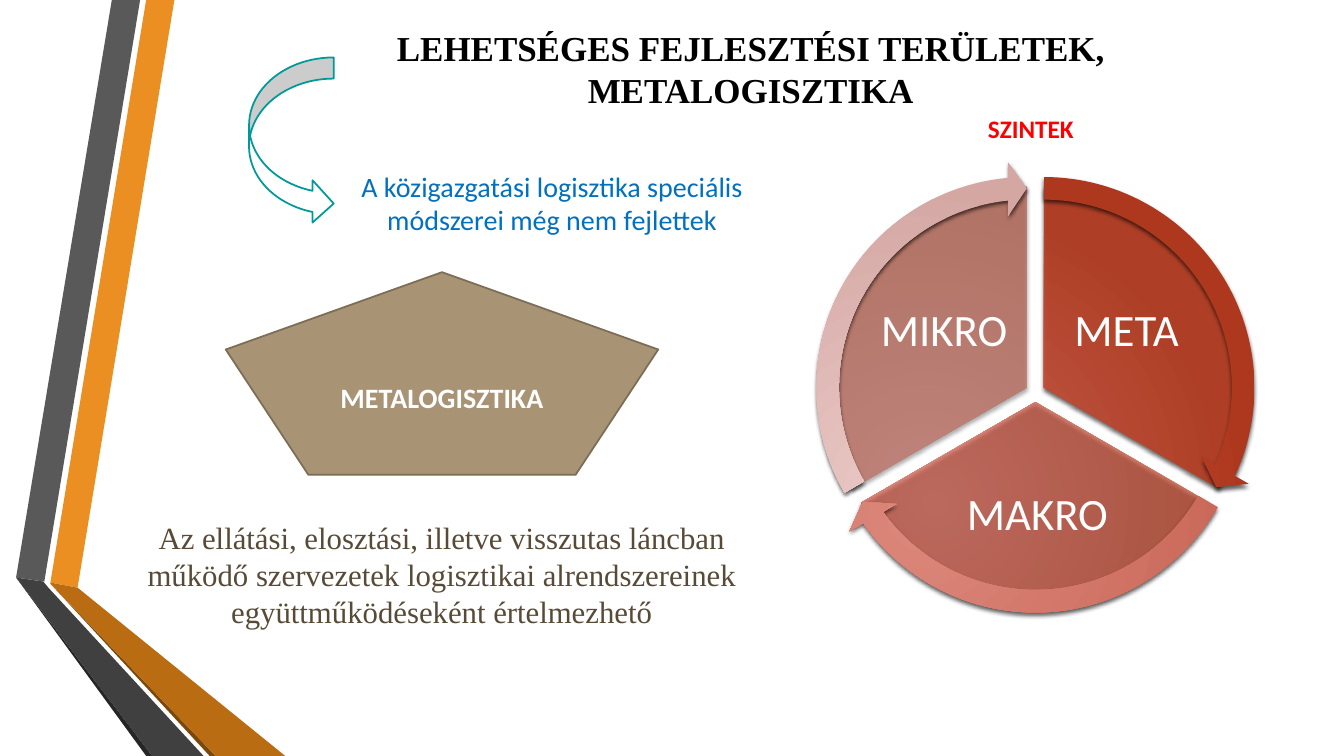
from collections import namedtuple

from lxml.etree import SubElement
from pptx import Presentation
from pptx.dml.color import RGBColor
from pptx.enum.shapes import MSO_SHAPE
from pptx.enum.text import MSO_ANCHOR, PP_ALIGN
from pptx.oxml import parse_xml
from pptx.oxml.ns import nsdecls, qn
from pptx.util import Inches, Pt

COLORS = {
    "black": "000000", "white": "FFFFFF", "red": "FF0000", "blue": "0070C0",
    "teal": "009999", "brown": "574A37", "tan": "A89374", "tan_line": "7C6D56",
    "orange": "EB8F22", "orange_fold": "B96C11", "orange_edge": "7B480B",
    "gray": "595959", "gray_fold": "404040", "gray_edge": "262626",
    "wedge_light": "D05A4A", "wedge_dark": "B63B1F",
    "meta_light": "C85849", "meta_dark": "AE381E",
    "makro_light": "DC887C", "makro_dark": "C96758",
    "mikro_light": "EBCAC7", "mikro_dark": "D4A7A3",
}
SANS, SERIF = "Calibri", "Times New Roman"

# Ribbon outlines on a grid of one-inch columns and rows
RIBBONS = [
    ("orange", [(0.5, 5.78), (0.77, 5.83), (1.73, 0), (1.45, 0)]),
    ("gray", [(1.39, 0), (1.11, 0), (0.16, 5.73), (0.44, 5.77)]),
    ("gray_edge", [(0.16, 5.73), (1.45, 7.5), (1.51, 7.5)]),
    ("orange_edge", [(0.5, 5.79), (2.08, 7.5), (2.14, 7.5)]),
    ("orange_fold", [(0.5, 5.79), (2.14, 7.5), (2.83, 7.5), (0.77, 5.83), (0.5, 5.78)]),
    ("gray_fold", [(2.02, 7.5), (0.48, 5.83), (0.43, 5.77), (0.16, 5.73), (1.51, 7.5)]),
]

# Wheel sectors: name, column, row, wedge angles, wedge opacity, arrow angles, label box
SECTORS = [
    ("META", 2, 0, (162, 18), 90, (14.72, 161.99), (54.08, 23.7, 30.69, 25.65)),
    ("MAKRO", 1, 1, (18, 90), 70, (86.72, 18), (27.47, 64.44, 45.92, 22.63)),
    ("MIKRO", 0, 0, (90, 162), 50, (158.73, 90), (15.24, 23.7, 30.69, 25.65)),
]


Box = namedtuple("Box", "left top width height")


def share(box, left, top, width, height):
    """Return an inner box given in percent of the outer one."""
    return Box(int(box.left + box.width * left / 100),
               int(box.top + box.height * top / 100),
               int(box.width * width / 100),
               int(box.height * height / 100))


def rgb(name):
    return RGBColor.from_string(COLORS[name])


def write(shape, text, size, font, color, bold=False, align=PP_ALIGN.CENTER,
          anchor=MSO_ANCHOR.TOP):
    frame = shape.text_frame
    frame.word_wrap = True
    frame.vertical_anchor = anchor
    paragraph = frame.paragraphs[0]
    paragraph.alignment = align
    run = paragraph.add_run()
    run.text = text
    run.font.size = Pt(size)
    run.font.name = font
    run.font.bold = bold
    run.font.color.rgb = rgb(color)
    return paragraph


def add_text(slide, box, *content, **options):
    shape = slide.shapes.add_textbox(*box)
    return shape.text_frame, write(shape, *content, **options)


def add_outlined(slide, kind, box, fill, line):
    shape = slide.shapes.add_shape(kind, *box)
    shape.shadow.inherit = False
    shape.fill.solid()
    shape.fill.fore_color.rgb = rgb(fill)
    shape.line.color.rgb = rgb(line)
    shape.line.width = Pt(1.25)
    return shape


def add_glossy(slide, kind, box, adjustments, light, dark, opacity=100):
    """Add a borderless shape with a radial gradient and a soft shadow."""
    shape = slide.shapes.add_shape(kind, *box)
    for index, value in enumerate(adjustments):
        shape.adjustments[index] = value
    shape.line.fill.background()
    stops = "".join(
        f'<a:gs pos="{position}"><a:srgbClr val="{COLORS[name]}">'
        f'<a:alpha val="{opacity * 1000}"/></a:srgbClr></a:gs>'
        for position, name in ((0, light), (100000, dark)))
    gradient = parse_xml(
        f'<a:gradFill {nsdecls("a")} rotWithShape="1"><a:gsLst>{stops}</a:gsLst>'
        '<a:path path="circle"><a:fillToRect l="50000" t="100000" r="100000" b="50000"/>'
        '</a:path></a:gradFill>')
    properties = shape.element.spPr
    properties.find(qn("a:prstGeom")).addnext(gradient)
    shape.shadow.inherit = False
    shadow = SubElement(properties.find(qn("a:effectLst")), qn("a:outerShdw"),
                        blurRad=str(Pt(3)), dist=str(Pt(2)), dir="5400000", rotWithShape="0")
    shade = SubElement(shadow, qn("a:srgbClr"), val=COLORS["black"])
    SubElement(shade, qn("a:alpha"), val="64000")


def add_ribbons(slide, box):
    for color, points in RIBBONS:
        corners = [(box.left + Inches(column), box.top + Inches(row))
                   for column, row in points]
        builder = slide.shapes.build_freeform(*corners[0])
        builder.add_line_segments(corners[1:], close=True)
        ribbon = builder.convert_to_shape()
        ribbon.shadow.inherit = False
        ribbon.fill.solid()
        ribbon.fill.fore_color.rgb = rgb(color)
        ribbon.line.fill.background()


def add_title(slide, box):
    title = slide.shapes.title
    title.left, title.top, title.width, title.height = box
    write(title, "LEHETSÉGES FEJLESZTÉSI TERÜLETEK, METALOGISZTIKA",
          25, SERIF, "black", bold=True)


def add_explanation(slide, box):
    # Curved arrow leading to the remark
    add_outlined(slide, MSO_SHAPE.CURVED_RIGHT_ARROW,
                 share(box, 18.53, 7.6, 6.3, 22.13), "white", "teal")
    add_text(slide, share(box, 24.68, 21.73, 32.78, 10.27),
             "A közigazgatási logisztika speciális módszerei még nem fejlettek",
             20, SANS, "blue")
    # Key term and its definition
    pentagon = add_outlined(slide, MSO_SHAPE.REGULAR_PENTAGON,
                            share(box, 16.8, 36, 32.18, 26.8), "tan", "tan_line")
    write(pentagon, "METALOGISZTIKA", 20, SANS, "white", bold=True,
          anchor=MSO_ANCHOR.MIDDLE)
    add_text(slide, share(box, 9.83, 68, 46.06, 16.13),
             "Az ellátási, elosztási, illetve visszutas láncban működő szervezetek "
             "logisztikai alrendszereinek együttműködéseként értelmezhető",
             22, SERIF, "brown")


def add_wheel(slide, box):
    column_step, row_step = 1.82, 3.1
    # Wedges and labels
    for name, column, row, angles, opacity, _, label_box in SECTORS:
        wedge = share(box, 5.36 + column * column_step, 5.39 + row * row_step, 85.62, 85.99)
        add_glossy(slide, MSO_SHAPE.PIE, wedge, angles, "wedge_light", "wedge_dark", opacity)
        frame, paragraph = add_text(slide, share(box, *label_box), name, 32, SANS, "white",
                                    anchor=MSO_ANCHOR.MIDDLE)
        frame.margin_left = frame.margin_right = Inches(0.04)
        frame.margin_top = frame.margin_bottom = Inches(0.04)
        paragraph.line_spacing = 0.9
    # Arrows around the rim
    for name, column, row, _, _, (end, start), _ in SECTORS:
        rim = share(box, column * column_step, row * row_step, 96.35, 96.77)
        add_glossy(slide, MSO_SHAPE.CIRCULAR_ARROW, rim, (0.05, 3.28, end, start, 0.06),
                   f"{name.lower()}_light", f"{name.lower()}_dark")


def main():
    presentation = Presentation()
    presentation.slide_width = Inches(13.33)
    presentation.slide_height = Inches(7.5)
    slide = presentation.slides.add_slide(presentation.slide_layouts[5])
    page = Box(0, 0, presentation.slide_width, presentation.slide_height)

    add_ribbons(slide, page)
    add_title(slide, share(page, 22.5, 2.8, 66.7, 12.53))
    add_explanation(slide, page)
    add_wheel(slide, share(page, 59.56, 21.33, 34.96, 61.87))
    add_text(slide, share(page, 72.77, 14.27, 13.88, 5.33), "SZINTEK",
             18, SANS, "red", bold=True, align=PP_ALIGN.LEFT)
    presentation.save("out.pptx")


if __name__ == "__main__":
    main()
